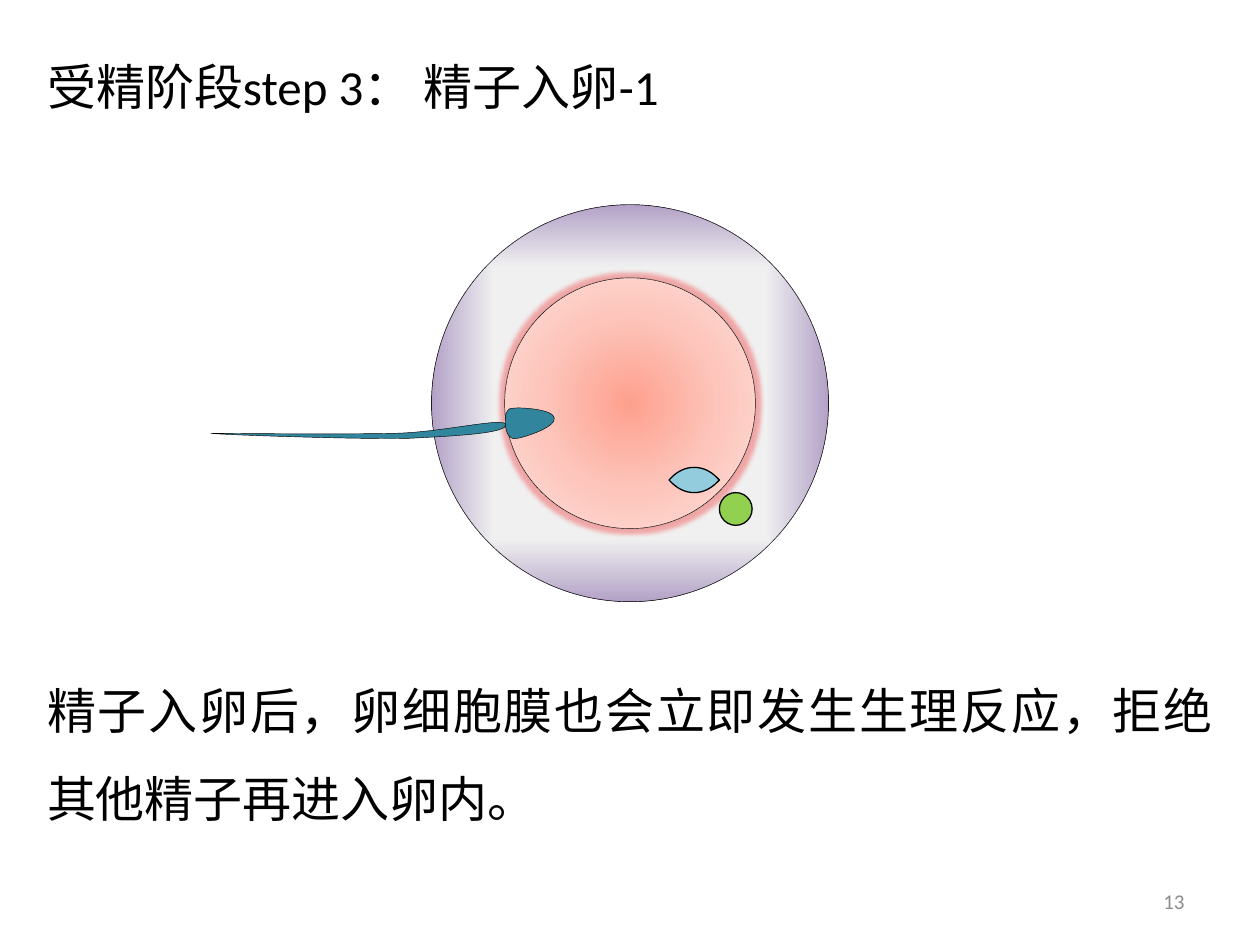
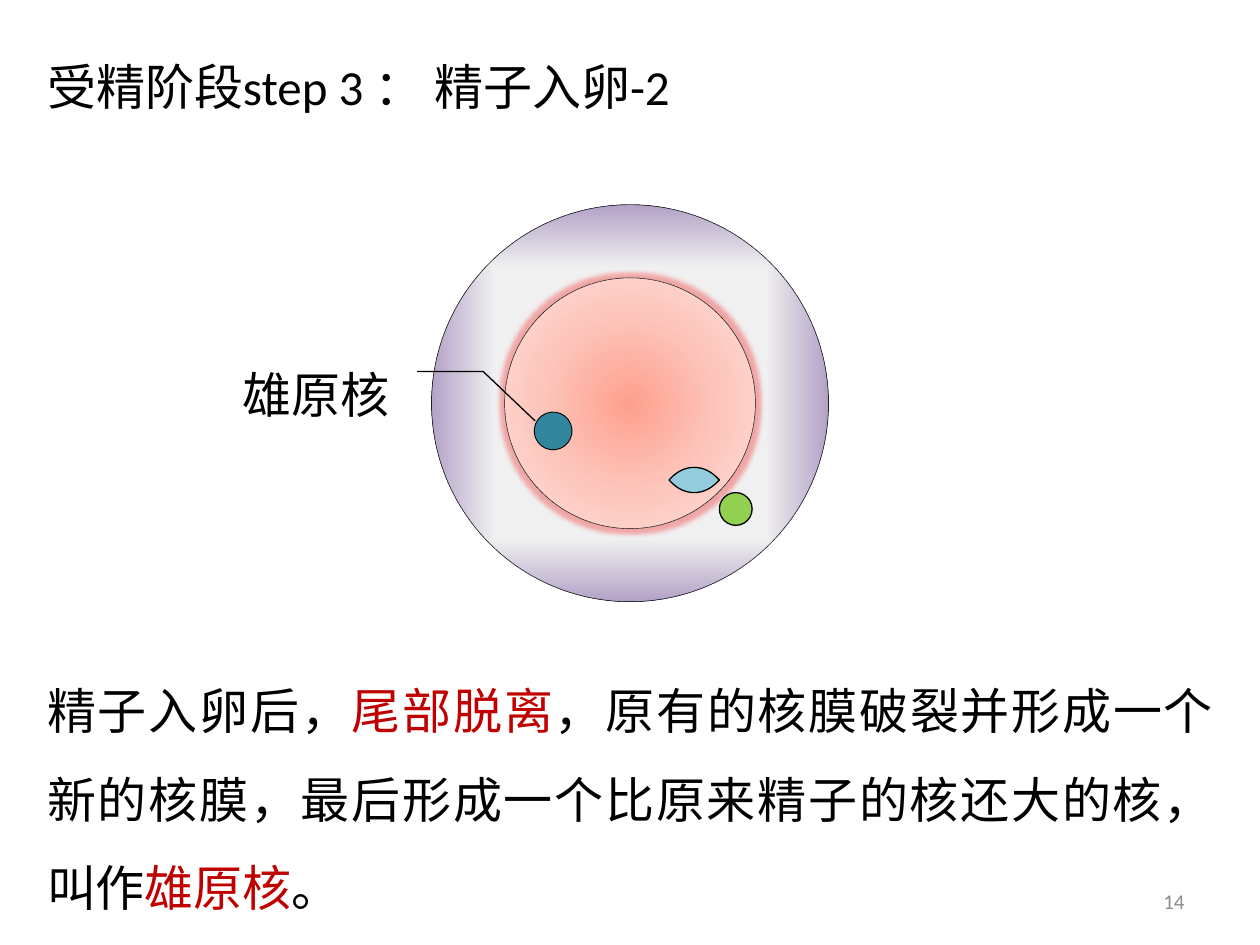
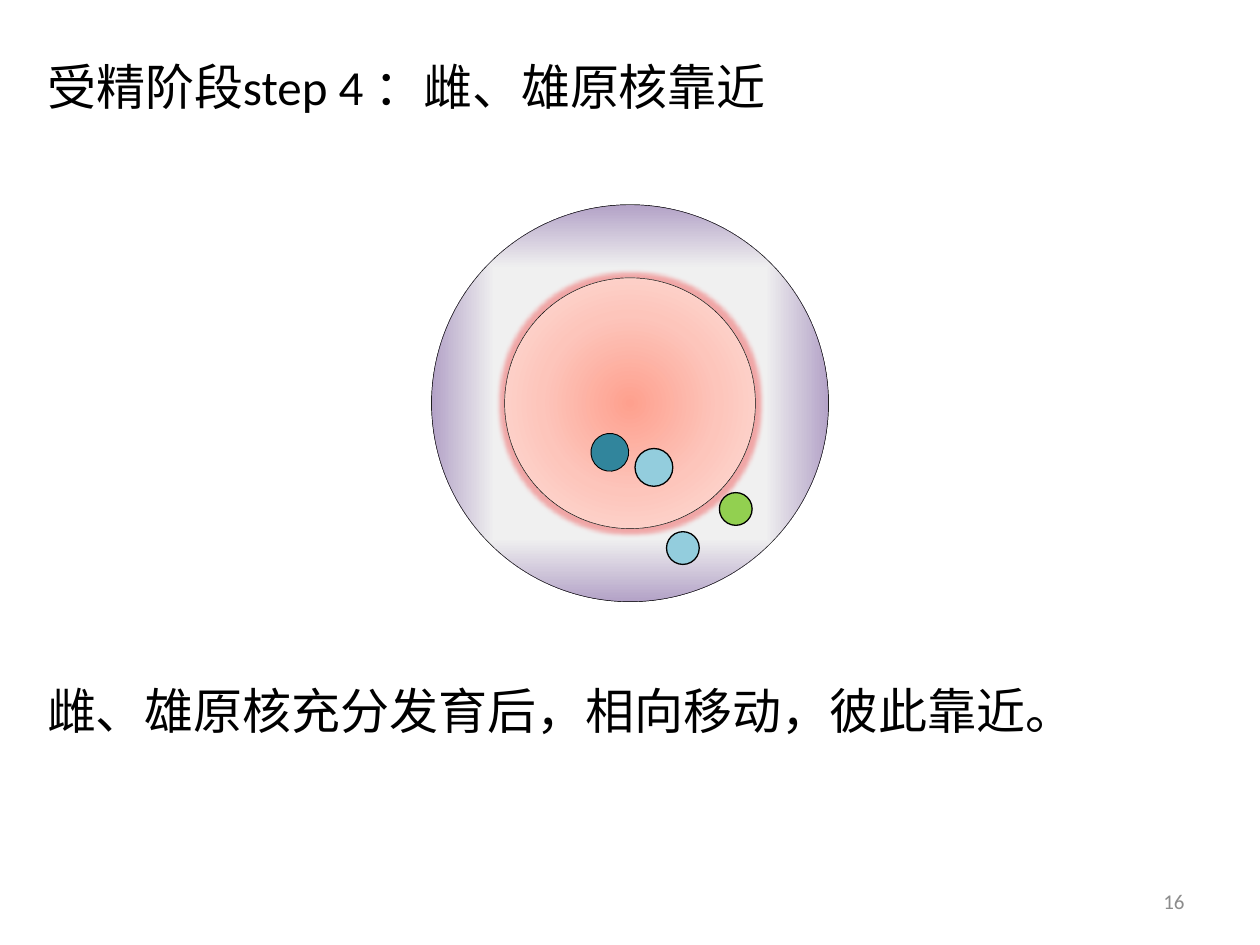
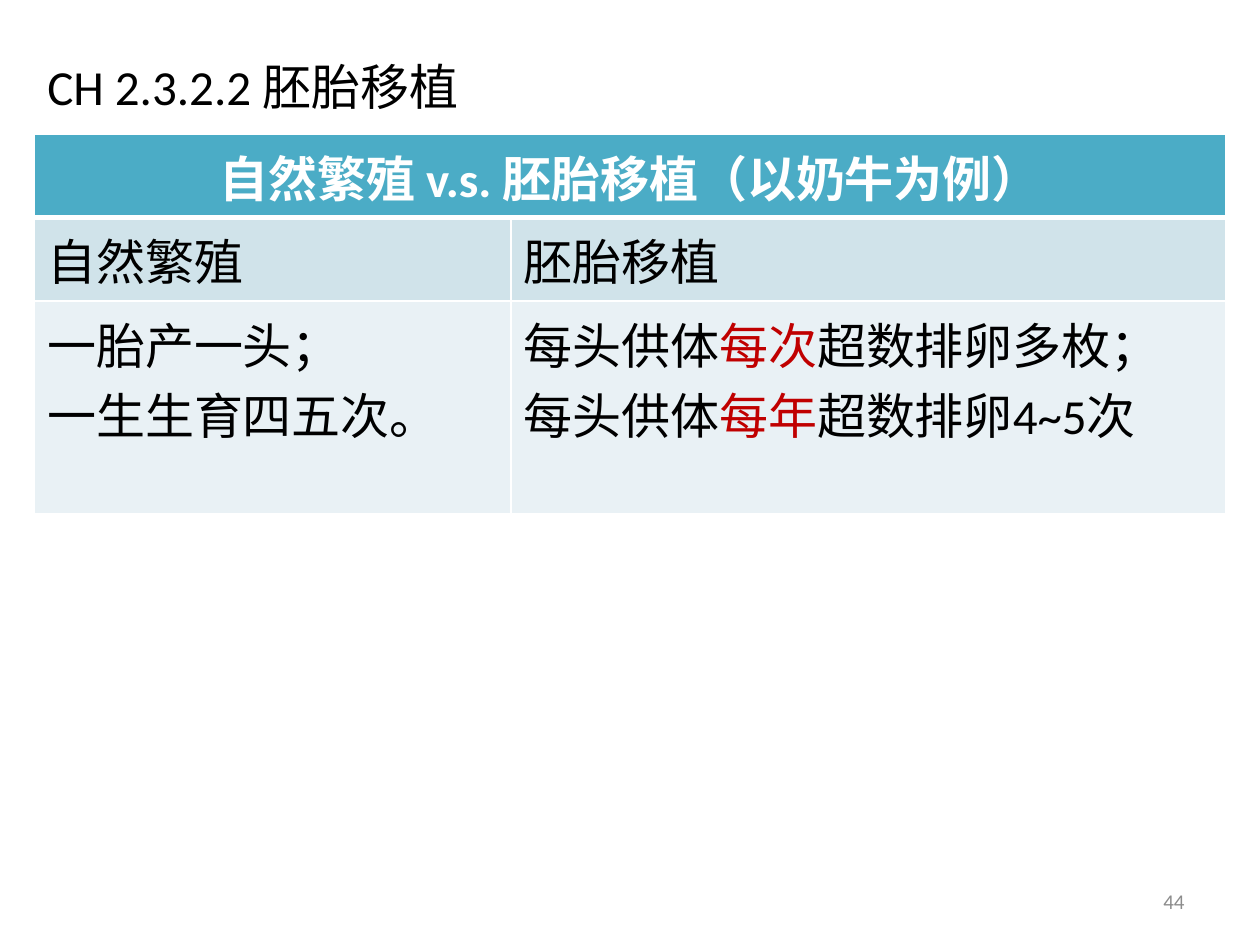
from dataclasses import dataclass
import math
from lxml import etree
from pptx import Presentation
from pptx import util as u
from pptx.dml.color import RGBColor
from pptx.enum import shapes, text
from pptx.oxml import ns


@dataclass(frozen=True)
class Theme:
    font: str = "Calibri"
    size: int = 28
    small: int = 12
    ink: str = "000000"
    red: str = "C00000"
    gray: str = "8C8C8C"
    white: str = "FFFFFF"
    male: str = "31859C"
    female: str = "93CDDD"
    polar: str = "92D050"
    glow: str = "F07474"
    head: str = "4BACC6"
    band: str = "D0E3EA"
    pale: str = "E9F1F5"
    rim: tuple = ((13, "F0F0F0"), (78, "F0F0F0"), (99, "E6E0EC"))
    zona: tuple = ((13, "F0F0F0"), (68, "F0F0F0"), (100, "B3A2C7"))
    yolk: tuple = ((0, "FEA08E"), (50, "FDC5BB"), (100, "FDE2DE"))


T = Theme()
WIDTH, HEIGHT = u.Inches(10), u.Inches(7.5)
CELL = WIDTH / 100
LEFT, SPAN = 2.75, 94.5
MID = (50, 32)
FORM = shapes.MSO_SHAPE
ALIGN = text.PP_ALIGN
ANCHOR = text.MSO_ANCHOR

LENS = [[(55.1, 37.1)],
        [(55.8, 37.1), (56.4, 37.4), (56.9, 37.9)],
        [(57.1, 38.1)], [(56.9, 38.3)],
        [(56.4, 38.8), (55.8, 39.1), (55.1, 39.1)],
        [(54.4, 39.1), (53.8, 38.8), (53.3, 38.3)],
        [(53.1, 38.1)], [(53.3, 37.9)],
        [(53.8, 37.4), (54.4, 37.1), (55.1, 37.1)]]
HEAD = [[(40.1, 33.7)],
        [(40.1, 33), (40.1, 32.4), (40.7, 32.4)],
        [(41.4, 32.3), (44, 32.5), (44, 33.2)],
        [(44.1, 33.9), (41.7, 34.7), (41, 34.8)],
        [(40.4, 34.9), (40.2, 34.4), (40.1, 33.7)]]
TAIL = [[(16.8, 34.4)],
        [(16.6, 34.4), (27.6, 34.5), (31.5, 34.4)],
        [(35.3, 34.3), (40, 33.1), (40.2, 33.7)],
        [(40.3, 34.4), (36.4, 34.6), (32.5, 34.8)],
        [(28.6, 34.9), (17, 34.5), (16.8, 34.4)]]


def grid(*cells):
    return [u.Emu(round(c * CELL)) for c in cells]


def node(up, tag, **attrs):
    return etree.SubElement(up, ns.qn(tag), {k: str(v) for k, v in attrs.items()})


def write(para, line, color=T.ink, size=T.size, align=ALIGN.LEFT, bold=False):
    para.alignment = align
    for i, part in enumerate(line.split("|")):
        run = para.add_run()
        run.text = part
        font = run.font
        font.name, font.size, font.bold = T.font, u.Pt(size), bold
        font.color.rgb = RGBColor.from_string(T.red if i % 2 else color)


def frame(shape, anchor, wrap=True):
    box = shape.text_frame
    box.auto_size = text.MSO_AUTO_SIZE.NONE
    box.word_wrap = wrap
    box.vertical_anchor = anchor
    return box.paragraphs[0]


def page(deck, title, num):
    slide = deck.slides.add_slide(deck.slide_layouts[5])
    head = slide.shapes.title
    head.left, head.top, head.width, head.height = grid(LEFT, 3.6, SPAN, 6.4)
    write(frame(head, ANCHOR.MIDDLE), title, align=ALIGN.JUSTIFY)
    foot = slide.shapes.add_textbox(*grid(71.7, 69.5, 23.3, 4))
    write(frame(foot, ANCHOR.MIDDLE), num, T.gray, T.small, ALIGN.RIGHT)
    return slide


def body(slide, line, high):
    box = slide.shapes.add_textbox(*grid(LEFT, 51.2, SPAN, high))
    para = frame(box, ANCHOR.TOP)
    para.line_spacing = 1.5
    write(para, line, align=ALIGN.JUSTIFY)


def paint(shape, fill, line):
    shape.shadow.inherit = False
    if fill:
        shape.fill.solid()
        shape.fill.fore_color.rgb = RGBColor.from_string(fill)
    else:
        shape.fill.background()
    shape.line.color.rgb = RGBColor.from_string(T.ink)
    shape.line.width = u.Pt(line)


def disc(slide, mid, size, fill, line=0.75):
    x, y = mid
    shape = slide.shapes.add_shape(
        FORM.OVAL, *grid(x - size / 2, y - size / 2, size, size))
    paint(shape, fill, line)
    return shape


def ball(slide, size, stops, kind):
    shape = disc(slide, MID, size, T.white, 0.25)
    props = shape._element.spPr
    grad = etree.Element(ns.qn("a:gradFill"), rotWithShape="1")
    steps = node(grad, "a:gsLst")
    for pos, color in stops:
        node(node(steps, "a:gs", pos=pos * 1000), "a:srgbClr", val=color)
    node(node(grad, "a:path", path=kind), "a:fillToRect",
         l=50000, t=50000, r=50000, b=50000)
    props.replace(props.find(ns.qn("a:solidFill")), grad)
    return shape


def halo(shape, color, size):
    effects = shape._element.spPr.find(ns.qn("a:effectLst"))
    glow = node(effects, "a:glow", rad=u.Pt(size))
    node(node(glow, "a:srgbClr", val=color), "a:alpha", val=60000)


def egg(slide):
    for stops in (T.rim, T.zona):
        ball(slide, 31.5, stops, "shape")
    for size in (5, 0):
        yolk = ball(slide, 19.9, T.yolk, "circle")
        if size:
            halo(yolk, T.glow, size)


def spin(point, mid, angle):
    a = math.radians(angle)
    x, y = point[0] - mid[0], point[1] - mid[1]
    return (mid[0] + x * math.cos(a) - y * math.sin(a),
            mid[1] + x * math.sin(a) + y * math.cos(a))


def bend(shape, strokes):
    track = next(shape._element.iter(ns.qn("a:path")))
    lines = iter(track.findall(ns.qn("a:lnTo")))
    for stroke in strokes:
        parts = [next(lines) for _ in stroke]
        if len(parts) == 3:
            curve = etree.Element(ns.qn("a:cubicBezTo"))
            parts[0].addprevious(curve)
            for part in parts:
                curve.append(part[0])
                track.remove(part)


def blob(slide, strokes, fill, line, mid=MID, turn=0):
    points = [grid(*spin(p, mid, -turn)) for stroke in strokes for p in stroke]
    pen = slide.shapes.build_freeform(*points[0], scale=1.0)
    pen.add_line_segments(points[1:], close=True)
    shape = pen.convert_to_shape()
    bend(shape, strokes[1:])
    shape.rotation = turn
    paint(shape, fill, line)


def lens(slide):
    blob(slide, LENS, T.female, 0.75)


def polar(slide):
    disc(slide, (58.4, 40.4), 2.6, T.polar)


def sperm(slide):
    blob(slide, HEAD, T.male, 0.25, (42.05, 33.45), -6.8)
    blob(slide, TAIL, T.male, 0.25, (28.5, 34.15), -14.2)


def core(slide, mid):
    disc(slide, mid, 3, T.male, 0.5).rotation = -6.8


def label(slide, name):
    shape = slide.shapes.add_shape(
        FORM.LINE_CALLOUT_2_NO_BORDER, *grid(18.2, 28.4, 13.8, 5.7))
    for i, value in enumerate((0.19, -0.08, 0.19, -0.46, 0.88, -0.76)):
        shape.adjustments[i] = value
    shape._element.spPr.find(ns.qn("a:xfrm")).set("flipH", "1")
    paint(shape, None, 0.75)
    write(frame(shape, ANCHOR.MIDDLE, False), name, align=ALIGN.CENTER)


def edge(cell, top, bottom):
    props = cell._tc.get_or_add_tcPr()
    for side, wide in zip("LRTB", (1, 1, top, bottom)):
        rule = node(props, "a:ln" + side, w=u.Pt(wide))
        node(node(rule, "a:solidFill"), "a:srgbClr", val=T.white)


def chart(slide, rows, cols, highs, fills):
    table = slide.shapes.add_table(
        len(rows), len(cols), *grid(LEFT, 10.65, sum(cols), sum(highs))).table
    table.horz_banding = False
    for col, wide in zip(table.columns, grid(*cols)):
        col.width = wide
    for row, high in zip(table.rows, grid(*highs)):
        row.height = high
    table.cell(0, 0).merge(table.cell(0, len(cols) - 1))
    for r, row in enumerate(rows):
        for c in range(len(cols)):
            cell = table.cell(r, c)
            edge(cell, 3 if r == 1 else 1, 3 if r == 0 else 1)
            cell.fill.solid()
            cell.fill.fore_color.rgb = RGBColor.from_string(fills[r])
            if c >= len(row):
                continue
            for i, line in enumerate(row[c]):
                box = cell.text_frame
                para = box.add_paragraph() if i else box.paragraphs[0]
                if r:
                    write(para, line)
                else:
                    cell.vertical_anchor = ANCHOR.MIDDLE
                    write(para, line, T.white, align=ALIGN.CENTER, bold=True)


def main():
    deck = Presentation()
    deck.slide_width, deck.slide_height = WIDTH, HEIGHT

    entry = page(deck, "受精阶段step 3： 精子入卵-1", "13")
    body(entry, "精子入卵后，卵细胞膜也会立即发生生理反应，拒绝其他精子再进入卵内。", 18.3)
    egg(entry)
    lens(entry)
    polar(entry)
    sperm(entry)

    male = page(deck, "受精阶段step 3 ： 精子入卵-2", "14")
    body(male, "精子入卵后，|尾部脱离|，原有的核膜破裂并形成一个新的核膜，"
               "最后形成一个比原来精子的核还大的核，叫作|雄原核|。", 23.8)
    egg(male)
    lens(male)
    polar(male)
    core(male, (43.9, 34.2))
    label(male, "雄原核")

    near = page(deck, "受精阶段step 4 ：雌、雄原核靠近", "16")
    body(near, "雌、雄原核充分发育后，相向移动，彼此靠近。", 23.8)
    egg(near)
    disc(near, (51.9, 37.1), 3, T.female)
    polar(near)
    core(near, (48.4, 35.9))
    disc(near, (54.2, 43.5), 2.6, T.female)

    cows = page(deck, "CH 2.3.2.2 胚胎移植", "44")
    chart(cows, [
        [["自然繁殖 v.s. 胚胎移植（以奶牛为例）"]],
        [["自然繁殖"], ["胚胎移植"]],
        [["一胎产一头；", "一生生育四五次。"],
         ["每头供体|每次|超数排卵多枚；", "每头供体|每年|超数排卵4~5次"]],
    ], (37.8, 56.7), (6.5, 6.5, 16.9), (T.head, T.band, T.pale))

    deck.save("out.pptx")


if __name__ == "__main__":
    main()
